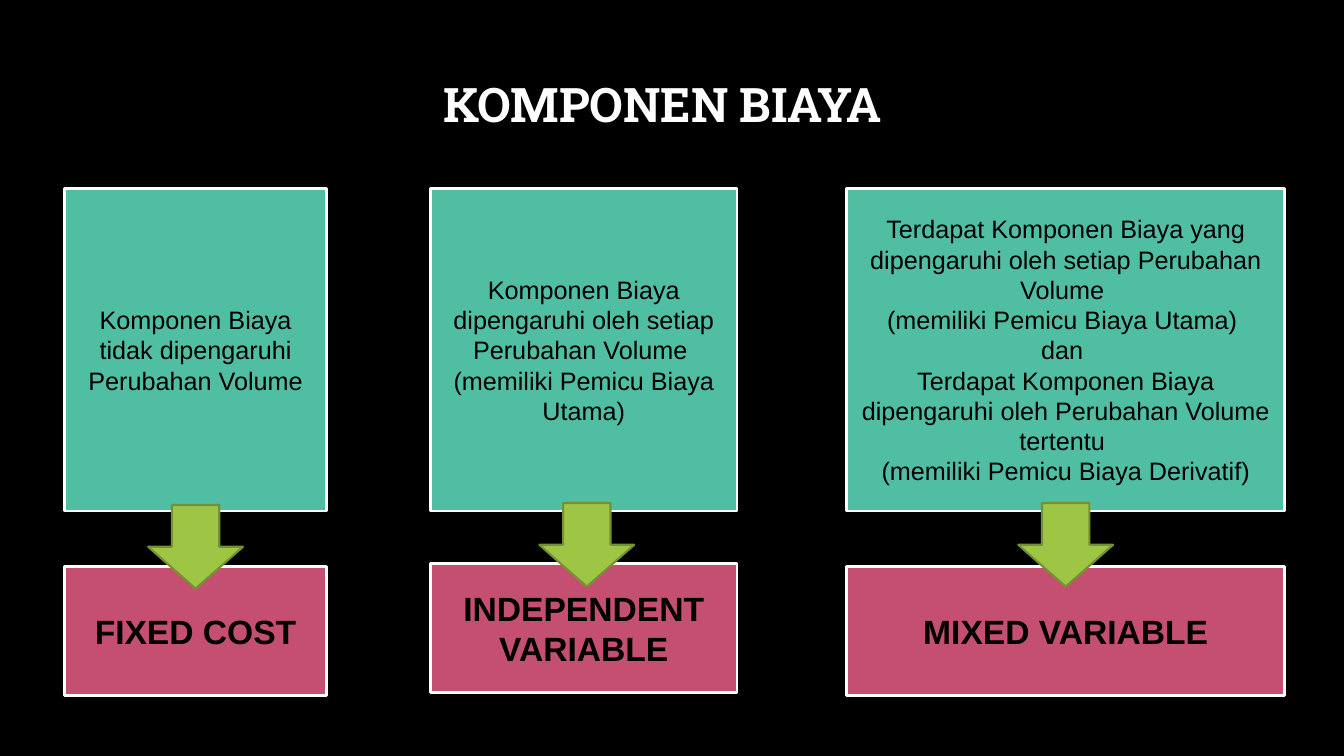
from pptx import Presentation
from pptx.dml.color import RGBColor
from pptx.enum.shapes import MSO_SHAPE
from pptx.enum.text import MSO_ANCHOR, PP_ALIGN
from pptx.util import Emu, Pt

PX = 9144
COLORS = {
    "background": "000000",
    "title": "FFFFFF",
    "text": "000000",
    "border": "FFFFFF",
    "description": "50BEA3",
    "cost": "C54F71",
    "arrow": "9EC544",
    "arrow_border": "759232",
}
BOX_TOP, BOX_H, COST_H = 187, 320, 128
ARROW_W, ARROW_H = 94, 83

COLUMNS = [
    (64, 260, 562, 147, 501, "FIXED COST",
     ["Komponen Biaya tidak dipengaruhi Perubahan Volume"]),
    (427, 304, 559, 535, 499, "INDEPENDENT VARIABLE",
     ["Komponen Biaya dipengaruhi oleh setiap Perubahan Volume ",
      "(memiliki Pemicu Biaya Utama)"]),
    (840, 434, 562, 1010, 499, "MIXED VARIABLE",
     ["Terdapat Komponen Biaya yang dipengaruhi oleh setiap Perubahan Volume ",
      "(memiliki Pemicu Biaya Utama) ",
      "dan ",
      "Terdapat Komponen Biaya dipengaruhi oleh Perubahan Volume tertentu ",
      "(memiliki Pemicu Biaya Derivatif)"]),
]


def px(*lengths):
    return [Emu(n * PX) for n in lengths]


def rgb(name):
    return RGBColor.from_string(COLORS[name])


def write(sp, lines, size, color="text", font="Arial", bold=False, spacing=None):
    tf = sp.text_frame
    tf.word_wrap = True
    tf.vertical_anchor = MSO_ANCHOR.MIDDLE
    for i, line in enumerate(lines):
        p = tf.add_paragraph() if i else tf.paragraphs[0]
        p.alignment = PP_ALIGN.CENTER
        p.line_spacing = spacing
        r = p.add_run()
        r.text = line
        r.font.size = Pt(size)
        r.font.name = font
        r.font.bold = bold
        r.font.color.rgb = rgb(color)


def add_block(s, kind, box, fill, border, width):
    sp = s.shapes.add_shape(kind, *px(*box))
    sp.shadow.inherit = False
    sp.fill.solid()
    sp.fill.fore_color.rgb = rgb(fill)
    sp.line.color.rgb = rgb(border)
    sp.line.width = Pt(width)
    return sp


def add_title(s, box, text):
    sp = s.shapes.add_textbox(*px(*box))
    write(sp, [text], 34, "title", "Roboto Slab", True, 0.9)


def add_column(s, left, width, cost_top, arrow_left, arrow_top, cost, lines):
    sp = add_block(s, MSO_SHAPE.RECTANGLE, (left, BOX_TOP, width, BOX_H),
                   "description", "border", 2)
    write(sp, lines, 18)
    sp = add_block(s, MSO_SHAPE.RECTANGLE, (left, cost_top, width, COST_H),
                   "cost", "border", 2)
    write(sp, [cost], 24, bold=True)
    add_block(s, MSO_SHAPE.DOWN_ARROW, (arrow_left, arrow_top, ARROW_W, ARROW_H),
              "arrow", "arrow_border", 1.5)


def main():
    prs = Presentation()
    prs.slide_width, prs.slide_height = px(1333, 750)
    s = prs.slides.add_slide(prs.slide_layouts[6])
    s.background.fill.solid()
    s.background.fill.fore_color.rgb = rgb("background")
    add_title(s, (91, 61, 1132, 90), "KOMPONEN BIAYA")
    for column in COLUMNS:
        add_column(s, *column)
    prs.save("out.pptx")


if __name__ == "__main__":
    main()
